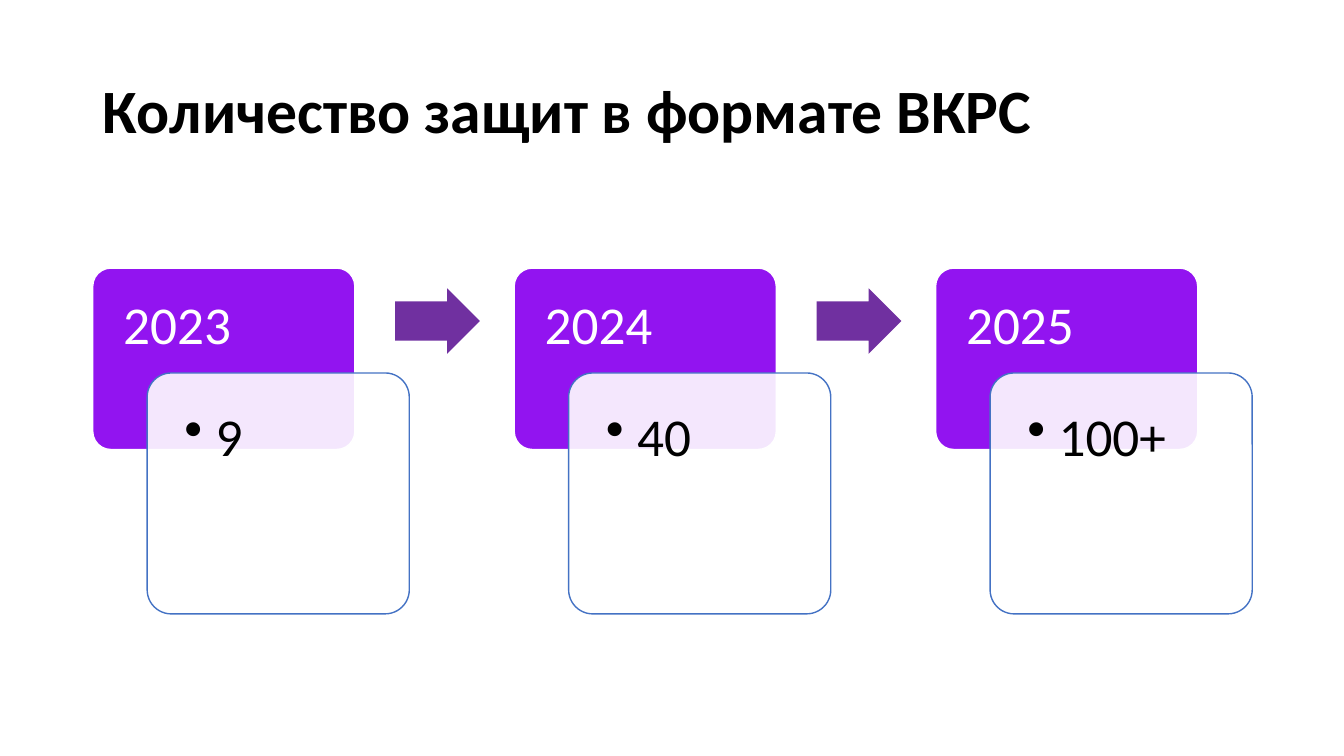
"""Builds the slide showing how many theses were defended each year."""
import pptx
import pptx.dml.color
import pptx.enum.shapes
import pptx.enum.text
import pptx.oxml
import pptx.oxml.ns
import pptx.util

Inches = pptx.util.Inches
Pt = pptx.util.Pt
Shape = pptx.enum.shapes.MSO_SHAPE
Anchor = pptx.enum.text.MSO_ANCHOR


def color(value):
    return pptx.dml.color.RGBColor.from_string(value)


def write(box, text, size, ink, anchor, inset, bold=False):
    frame = box.text_frame
    margins = dict(zip(("margin_left", "margin_top", "margin_right", "margin_bottom"), map(Inches, inset)))
    frame_format = {
        "auto_size": pptx.enum.text.MSO_AUTO_SIZE.NONE,
        "word_wrap": True,
        "vertical_anchor": anchor,
        **margins,
    }
    for name, value in frame_format.items():
        setattr(frame, name, value)
    para = frame.paragraphs[0]
    para.alignment = pptx.enum.text.PP_ALIGN.LEFT
    para.line_spacing = 0.9
    span = para.add_run()
    span.text = text
    for name, value in {"name": "Calibri", "size": Pt(size), "bold": bold}.items():
        setattr(span.font, name, value)
    span.font.color.rgb = color(ink)
    return para


deck = pptx.Presentation()
deck.slide_width = Inches(13.33)
deck.slide_height = Inches(7.5)
page = deck.slides.add_slide(deck.slide_layouts[5])

title = page.shapes.title
title_place = {"left": 0.92, "top": 0.4, "width": 11.5, "height": 1.45}
for name, value in title_place.items():
    setattr(title, name, Inches(value))
write(title, "Количество защит в формате ВКРС", 44, "000000", Anchor.MIDDLE, (0.1, 0.05, 0.1, 0.05), True)

defenses = {"2023": "9", "2024": "40", "2025": "100+"}
first_left = 0.92
step = 4.18
parts = {
    "year": (Shape.ROUNDED_RECTANGLE, (0, 2.66, 2.6, 1.8), (0.1,), "9214F0", "FFFFFF"),
    "count": (Shape.ROUNDED_RECTANGLE, (0.54, 3.7, 2.6, 2.39), (0.1,), "FFFFFF", "4472C4"),
    "arrow": (Shape.RIGHT_ARROW, (3, 2.86, 0.84, 0.65), (0.6, 0.5), "7030A0", None),
}

for index, (year, count) in enumerate(defenses.items()):
    boxes = {}
    for part, (kind, (offset, top, width, height), adjustments, fill, line) in parts.items():
        if part == "arrow" and index == len(defenses) - 1:
            continue
        left = first_left + index * step + offset
        box = page.shapes.add_shape(kind, *map(Inches, (left, top, width, height)))
        box.shadow.inherit = False
        for position, value in enumerate(adjustments):
            box.adjustments[position] = value
        box.fill.solid()
        box.fill.fore_color.rgb = color(fill)
        if line:
            box.line.color.rgb = color(line)
            box.line.width = Pt(1)
        else:
            box.line.fill.background()
        boxes[part] = box

    write(boxes["year"], year, 38, "FFFFFF", Anchor.TOP, (0.25, 0.25, 0.25, 0.16))
    para = write(boxes["count"], count, 38, "000000", Anchor.TOP, (0.3, 0.3, 0.3, 0.3))

    indent = Inches(0.31)
    properties = para._p.get_or_add_pPr()
    properties.set("marL", str(indent))
    properties.set("indent", str(-indent))
    bullet = pptx.oxml.parse_xml(f'<a:buChar {pptx.oxml.ns.nsdecls("a")} char="•"/>')
    properties.append(bullet)

    tint = boxes["count"].fill.fore_color._xFill.find(".//" + pptx.oxml.ns.qn("a:srgbClr"))
    alpha = pptx.oxml.parse_xml(f'<a:alpha {pptx.oxml.ns.nsdecls("a")} val="90000"/>')
    tint.append(alpha)

deck.save("out.pptx")
